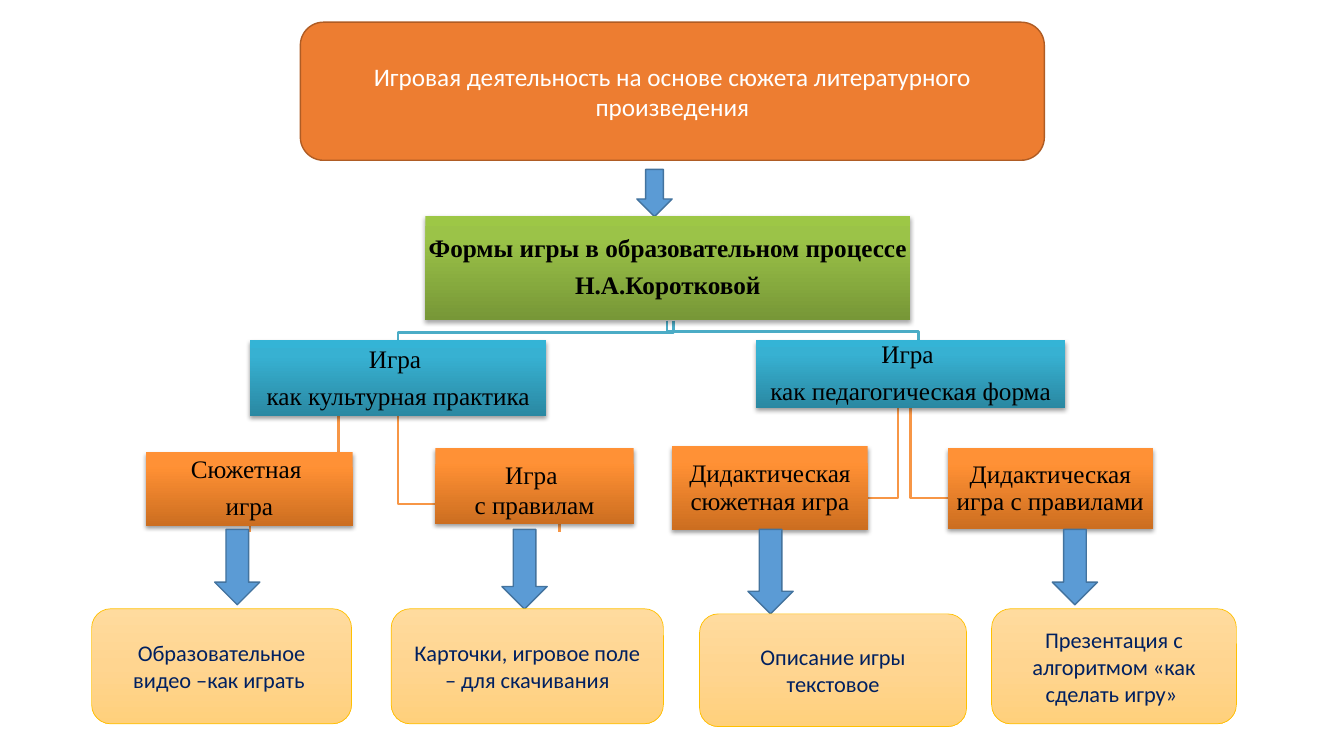
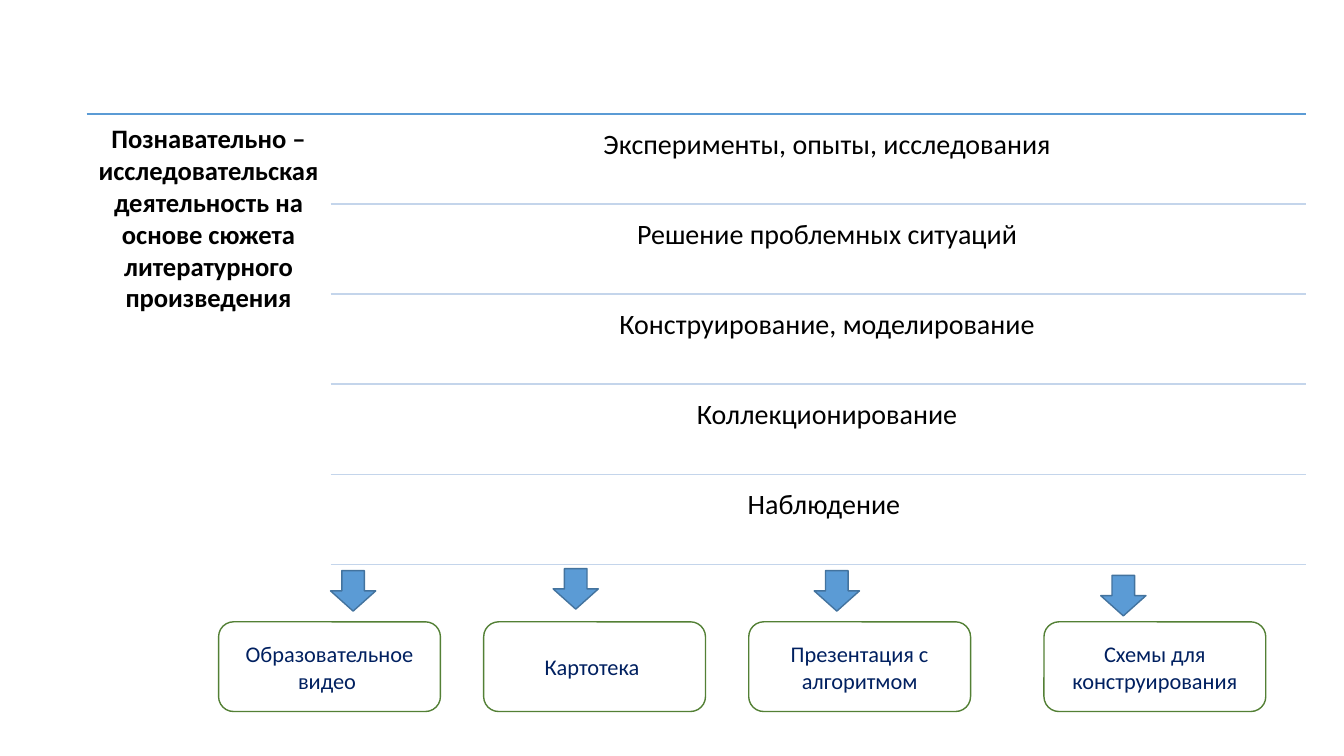
from copy import deepcopy

from lxml import etree
from pptx import Presentation
from pptx.dml.color import RGBColor
from pptx.enum.shapes import MSO_CONNECTOR, MSO_SHAPE
from pptx.enum.text import MSO_ANCHOR, PP_ALIGN
from pptx.oxml.ns import qn
from pptx.util import Cm, Pt

RECTANGLE = MSO_SHAPE.RECTANGLE
ROUNDED = MSO_SHAPE.ROUNDED_RECTANGLE
DOWN_ARROW = MSO_SHAPE.DOWN_ARROW
STRAIGHT = MSO_CONNECTOR.STRAIGHT
CENTER = PP_ALIGN.CENTER
MIDDLE, TOP = MSO_ANCHOR.MIDDLE, MSO_ANCHOR.TOP

BLACK = RGBColor(0x00, 0x00, 0x00)
WHITE = RGBColor(0xFF, 0xFF, 0xFF)
NAVY = RGBColor(0x00, 0x20, 0x60)
ORANGE = RGBColor(0xED, 0x7D, 0x31)
ORANGE_EDGE = RGBColor(0xAF, 0x5C, 0x24)
BLUE = RGBColor(0x5B, 0x9B, 0xD5)
BLUE_EDGE = RGBColor(0x43, 0x73, 0x9E)
PALE_BLUE = RGBColor(0xC4, 0xD5, 0xEB)
GOLD_EDGE = RGBColor(0xFF, 0xC0, 0x00)
GREEN_EDGE = RGBColor(0x53, 0x80, 0x35)
ORANGE_BRANCH = RGBColor(0xF7, 0x96, 0x46)
TEAL_BRANCH = RGBColor(0x4B, 0xAC, 0xC6)

GREEN_SHADES = (
    (0, RGBColor(0x9D, 0xC7, 0x46)),
    (0.2, RGBColor(0x9B, 0xC3, 0x48)),
    (1, RGBColor(0x77, 0x97, 0x37)),
)
TEAL_SHADES = (
    (0, RGBColor(0x34, 0xB4, 0xD6)),
    (0.2, RGBColor(0x37, 0xB1, 0xD2)),
    (1, RGBColor(0x2A, 0x88, 0xA2)),
)
ORANGE_SHADES = (
    (0, RGBColor(0xFF, 0x91, 0x36)),
    (0.2, RGBColor(0xFF, 0x90, 0x34)),
    (1, RGBColor(0xCC, 0x6E, 0x20)),
)
GOLD_SHADES = (
    (0, RGBColor(0xFF, 0xDB, 0x9E)),
    (0.5, RGBColor(0xFF, 0xD5, 0x90)),
    (1, RGBColor(0xFF, 0xD0, 0x7C)),
)

SANS = "Calibri"
SERIF = "Times New Roman"


def paint(shape, fill, edge, width=1):
    """Fill a shape with a colour, top-down shades or nothing, and outline it."""
    shape.shadow.inherit = False
    if fill is None:
        shape.fill.background()
    elif isinstance(fill, RGBColor):
        shape.fill.solid()
        shape.fill.fore_color.rgb = fill
    else:
        shape.fill.gradient()
        shape.fill.gradient_angle = 270
        stop_list = shape._element.spPr.find(".//" + qn("a:gsLst"))
        stop_list.append(deepcopy(stop_list[-1]))
        for stop, (position, color) in zip(shape.fill.gradient_stops, fill):
            stop.position = position
            stop.color.rgb = color
    if edge is None:
        shape.line.fill.background()
    else:
        shape.line.color.rgb = edge
        shape.line.width = Pt(width)


def add_shape(slide, kind, box, fill, edge, width=1):
    """Add a painted preset shape in a box given in centimetres."""
    shape = slide.shapes.add_shape(kind, *map(Cm, box))
    paint(shape, fill, edge, width)
    return shape


def write(shape, lines, size, color, font=SANS, bold=False, anchor=MIDDLE,
          inset=None, spacing=None, after=0):
    """Write centred paragraphs into a shape."""
    frame = shape.text_frame
    frame.word_wrap = True
    frame.vertical_anchor = anchor
    if inset is not None:
        frame.margin_left = frame.margin_right = Cm(inset)
        frame.margin_top = frame.margin_bottom = Cm(inset)
    for index, line in enumerate(lines):
        para = frame.paragraphs[0] if index == 0 else frame.add_paragraph()
        para.alignment = CENTER
        para.space_after = Pt(after)
        if spacing:
            para.line_spacing = spacing
        span = para.add_run()
        span.text = line
        span.font.name = font
        span.font.size = Pt(size)
        span.font.bold = bold
        span.font.color.rgb = color


def add_shadow(shape, opacity):
    """Give a shape a soft shadow that falls downwards."""
    effects = shape._element.spPr.find(qn("a:effectLst"))
    shadow = etree.SubElement(effects, qn("a:outerShdw"), blurRad="40000",
                              dist="21000", dir="5400000", rotWithShape="0")
    color = etree.SubElement(shadow, qn("a:srgbClr"), val="000000")
    etree.SubElement(color, qn("a:alpha"), val=str(opacity * 1000))


def add_arrow(slide, box):
    """Add a blue arrow pointing down."""
    add_shape(slide, DOWN_ARROW, box, BLUE, BLUE_EDGE)


def add_branch(slide, start, turn, end, color):
    """Draw an open line that goes down, across at the turn, and down again."""
    (start_x, start_y), (end_x, end_y) = start, end
    builder = slide.shapes.build_freeform(Cm(start_x), Cm(start_y))
    corners = ((start_x, turn), (end_x, turn), (end_x, end_y))
    builder.add_line_segments([(Cm(x), Cm(y)) for x, y in corners], close=False)
    paint(builder.convert_to_shape(), None, color, 2)


def add_rule(slide, left, top, width, color):
    """Draw a horizontal rule."""
    rule = slide.shapes.add_connector(STRAIGHT, Cm(left), Cm(top), Cm(left + width), Cm(top))
    rule.line.color.rgb = color
    rule.line.width = Pt(1)
    etree.SubElement(rule._element.spPr, qn("a:effectLst"))


def add_card(slide, box, text, fill, edge, width):
    """Add a rounded card naming a result."""
    card = add_shape(slide, ROUNDED, box, fill, edge, width)
    write(card, [text], 16, NAVY)


def add_tree(slide, left, top):
    """Draw the tree of game forms from its top left corner."""
    branches = (
        ((18.95, 4.85), 7.11, (15.73, 7.79), ORANGE_BRANCH),
        ((19.26, 4.85), 7.11, (22.43, 7.79), ORANGE_BRANCH),
        ((13.13, 2.64), 2.92, (19.46, 3.6), TEAL_BRANCH),
        ((4.85, 5.02), 7.26, (2.62, 7.97), ORANGE_BRANCH),
        ((6.35, 5.02), 7.26, (10.42, 7.97), ORANGE_BRANCH),
        ((13.29, 2.64), 2.94, (6.35, 3.63), TEAL_BRANCH),
    )
    for (start_x, start_y), turn, (end_x, end_y), color in branches:
        add_branch(slide, (left + start_x, top + start_y), top + turn,
                   (left + end_x, top + end_y), color)
    nodes = (
        (7.04, 0, 12.22, 2.62, GREEN_SHADES,
         ("Формы игры в образовательном процессе", "Н.А.Коротковой")),
        (2.62, 3.14, 7.47, 1.91, TEAL_SHADES, ("Игра ", "как культурная практика")),
        (15.37, 3.14, 7.8, 1.7, TEAL_SHADES, ("Игра ", "как педагогическая форма")),
        (0, 5.96, 5.21, 1.85, ORANGE_SHADES, ("Сюжетная ", "игра")),
        (13.26, 5.81, 4.93, 2.11, ORANGE_SHADES, ("Дидактическая сюжетная игра",)),
        (20.2, 5.86, 5.18, 2.03, ORANGE_SHADES, ("Дидактическая игра с правилами",)),
    )
    for x, y, width, height, shades, lines in nodes:
        is_root = shades is GREEN_SHADES
        node = add_shape(slide, RECTANGLE, (left + x, top + y, width, height), shades, None)
        add_shadow(node, 35 if is_root else 38)
        write(node, lines, 18, BLACK, SERIF, is_root, inset=0.03, spacing=0.9, after=7)
    rules_game = add_shape(slide, RECTANGLE, (left + 7.29, top + 5.86, 5, 1.91),
                           ORANGE_SHADES, None)
    add_shadow(rules_game, 38)
    write(rules_game, ("Игра ", "с правилам"), 18, BLACK, SERIF, inset=0.03)
    rules_game.text_frame.margin_top = Cm(0.2)


def add_game_results(slide, left, top):
    """Place arrows and gold cards under the tree."""
    results = (
        (3.1, 1.9, (0, 2, 6.55, 2.9), "Образовательное видео –как играть "),
        (10.34, 2.01, (7.55, 2, 6.86, 2.9), "Карточки, игровое поле – для скачивания"),
        (16.54, 2.13, (15.32, 2.13, 6.73, 2.84), "Описание игры текстовое"),
        (24.21, 1.9, (22.68, 2, 6.17, 2.9), "Презентация с алгоритмом «как сделать игру» "),
    )
    for arrow_x, arrow_height, (x, y, width, height), text in results:
        add_arrow(slide, (left + arrow_x, top, 1.14, arrow_height))
        add_card(slide, (left + x, top + y, width, height), text,
                 GOLD_SHADES, GOLD_EDGE, 0.5)


def add_activity_list(slide, left, top, width, height):
    """List research activities between rules beside their heading."""
    heading_width, row_indent, pitch = 6.15, 6.6, 2.27
    add_rule(slide, left, top, width, BLUE)
    heading = slide.shapes.add_textbox(*map(Cm, (left, top, heading_width, height)))
    write(heading, ["Познавательно –исследовательская деятельность на основе "
                    "сюжета литературного произведения"],
          19, BLACK, bold=True, anchor=TOP, inset=0.2)
    activities = (
        "Эксперименты, опыты, исследования",
        "Решение проблемных ситуаций",
        "Конструирование, моделирование",
        "Коллекционирование",
        "Наблюдение ",
    )
    for index, activity in enumerate(activities):
        row_top = top + index * pitch
        row_box = (left + row_indent, row_top + 0.11, width - row_indent, 2.16)
        row = slide.shapes.add_textbox(*map(Cm, row_box))
        write(row, [activity], 20, BLACK, anchor=TOP, inset=0.2)
        add_rule(slide, left + heading_width, row_top + pitch,
                 width - heading_width, PALE_BLUE)


def add_research_results(slide, left, top):
    """Place arrows and outlined cards under the activity list."""
    results = (
        (2.82, 0.05, 0, "Образовательное видео "),
        (8.43, 0, 6.68, "Картотека "),
        (15.01, 0.05, 13.36, "Презентация с алгоритмом"),
        (22.23, 0.17, 20.8, "Схемы для конструирования"),
    )
    for arrow_x, arrow_y, card_x, text in results:
        add_arrow(slide, (left + arrow_x, top + arrow_y, 1.14, 1.02))
        add_card(slide, (left + card_x, top + 1.34, 5.59, 2.26), text,
                 None, GREEN_EDGE, 1)


def build_game_slide(deck):
    """Build the slide about game activity."""
    slide = deck.slides.add_slide(deck.slide_layouts[6])
    title = add_shape(slide, ROUNDED, (7.57, 0.56, 18.75, 3.48), ORANGE, ORANGE_EDGE)
    write(title, ["Игровая деятельность на основе сюжета литературного произведения"],
          18, WHITE)
    add_arrow(slide, (16.05, 4.27, 0.89, 1.19))
    add_tree(slide, 3.68, 5.44)
    add_game_results(slide, 2.31, 13.34)


def build_research_slide(deck):
    """Build the slide about research activity."""
    slide = deck.slides.add_slide(deck.slide_layouts[6])
    add_activity_list(slide, 2.18, 2.87, 30.73, 11.46)
    add_research_results(slide, 5.51, 14.33)


def main():
    """Build and save the deck."""
    deck = Presentation()
    deck.slide_width, deck.slide_height = Cm(33.87), Cm(19.05)
    build_game_slide(deck)
    build_research_slide(deck)
    deck.save("out.pptx")


if __name__ == "__main__":
    main()
